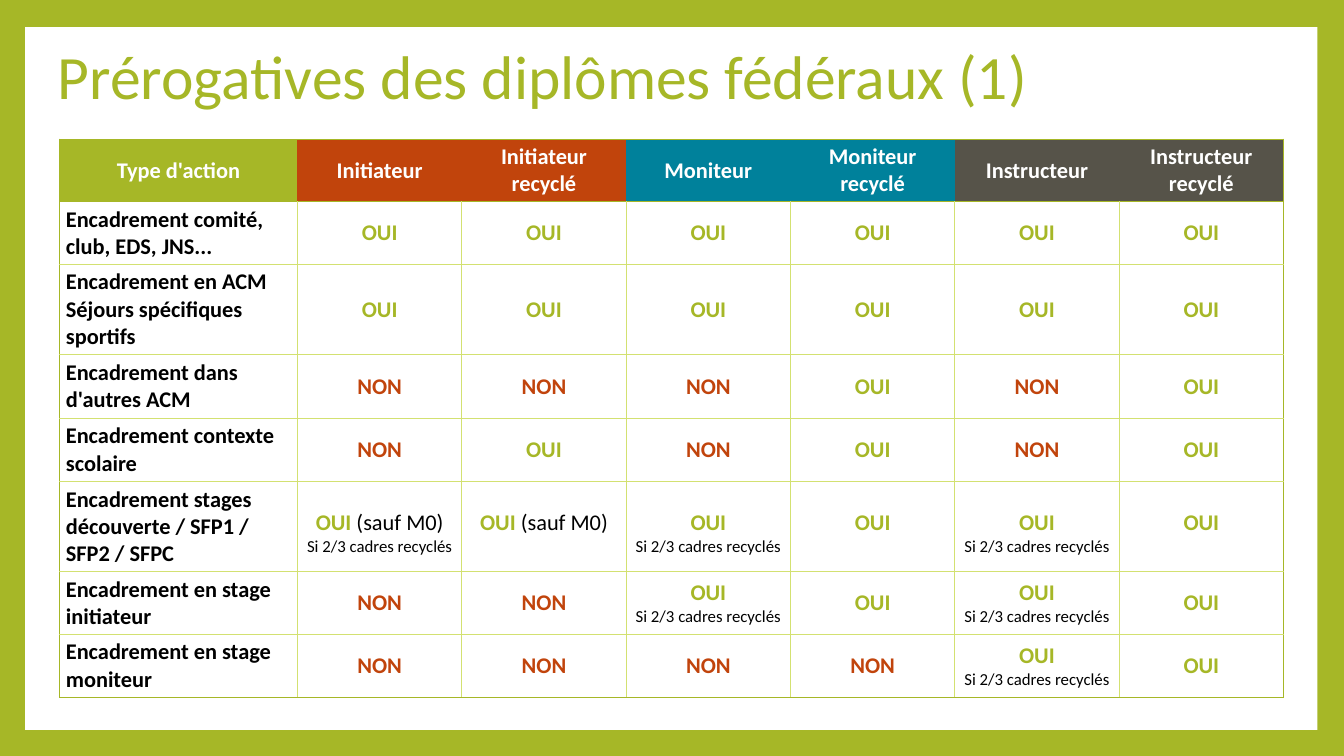
"""Build the slide listing what each federal diploma allows its holder to do."""
from lxml.etree import SubElement
from pptx import Presentation
from pptx.dml.color import RGBColor
from pptx.enum.shapes import MSO_SHAPE
from pptx.enum.text import MSO_ANCHOR, MSO_AUTO_SIZE, PP_ALIGN
from pptx.oxml.ns import qn
from pptx.util import Pt

COLORS = {
    "lime": "A6B727",
    "pale lime": "D3E171",
    "rust": "C1440C",
    "teal": "00819B",
    "brown": "565349",
    "white": "FFFFFF",
    "black": "000000",
}
VERDICT_COLORS = {"OUI": "lime", "NON": "rust"}
NO_TABLE_STYLE = "{2D5ABB26-0587-4C30-8999-92F81FD0307C}"

YES, NO = "OUI", "NON"
NOTE = "\nSi 2/3 cadres recyclés"
YES_NOTE = YES + NOTE
YES_EXCEPT = YES + " (sauf M0)"

HEADERS = [
    ("Type d'action", "lime"),
    ("Initiateur", "rust"),
    ("Initiateur recyclé", "rust"),
    ("Moniteur", "teal"),
    ("Moniteur recyclé", "teal"),
    ("Instructeur", "brown"),
    ("Instructeur recyclé", "brown"),
]
ACTIONS = [
    ("Encadrement comité, club, EDS, JNS...", [YES] * 6),
    ("Encadrement en ACM\nSéjours spécifiques sportifs", [YES] * 6),
    ("Encadrement dans d'autres ACM", [NO, NO, NO, YES, NO, YES]),
    ("Encadrement contexte scolaire", [NO, YES, NO, YES, NO, YES]),
    ("Encadrement stages découverte / SFP1 / SFP2 / SFPC",
     [YES_EXCEPT + NOTE, YES_EXCEPT, YES_NOTE, YES, YES_NOTE, YES]),
    ("Encadrement en stage initiateur", [NO, NO, YES_NOTE, YES, YES_NOTE, YES]),
    ("Encadrement en stage moniteur", [NO, NO, NO, NO, YES_NOTE, YES]),
]
COURSE_ROW = 5
ROW_HEIGHTS = [44.8, 44.8, 64.4, 45.4, 45.4, 64.4, 44.8, 44.8]
COLUMN_WIDTHS = [170] + [117.4] * 6


def write(paragraph, text, size=16, color="black", bold=True, align=PP_ALIGN.CENTER):
    paragraph.alignment = align
    run = paragraph.add_run()
    run.text = text
    run.font.name = "Calibri"
    run.font.size = Pt(size)
    run.font.bold = bold
    run.font.color.rgb = RGBColor.from_string(COLORS[color])


def draw_border(cell, side, on_frame):
    properties = cell._tc.get_or_add_tcPr()
    width = Pt(0.79 if on_frame else 1)
    line = SubElement(properties, qn(f"a:ln{side}"), w=str(width))
    fill = SubElement(line, qn("a:solidFill"))
    SubElement(fill, qn("a:srgbClr"), val=COLORS["lime" if on_frame else "pale lime"])


presentation = Presentation()
presentation.slide_width = Pt(960)
presentation.slide_height = Pt(540)
slide = presentation.slides.add_slide(presentation.slide_layouts[5])
slide.background.fill.solid()
slide.background.fill.fore_color.rgb = RGBColor.from_string(COLORS["lime"])

title = slide.shapes.title
title.left, title.top, title.width, title.height = Pt(34), Pt(28.8), Pt(895.7), Pt(56)
title.text_frame.auto_size = MSO_AUTO_SIZE.NONE
title.text_frame.vertical_anchor = MSO_ANCHOR.MIDDLE
title.text_frame.paragraphs[0].line_spacing = 0.9
write(title.text_frame.paragraphs[0], "Prérogatives des diplômes fédéraux (1)",
      size=44, color="lime", bold=False, align=PP_ALIGN.LEFT)

panel = slide.shapes.add_shape(MSO_SHAPE.RECTANGLE, Pt(18), Pt(19.4), Pt(923), Pt(502))
panel.shadow.inherit = False
panel.fill.solid()
panel.fill.fore_color.rgb = RGBColor.from_string(COLORS["white"])
panel.line.fill.background()
title.element.addprevious(panel.element)

table = slide.shapes.add_table(
    len(ROW_HEIGHTS), len(COLUMN_WIDTHS), Pt(42.5), Pt(99.4),
    Pt(sum(COLUMN_WIDTHS)), Pt(sum(ROW_HEIGHTS))).table
table.horz_banding = False
table._tbl.tblPr.find(qn("a:tableStyleId")).text = NO_TABLE_STYLE
for column, width in zip(table.columns, COLUMN_WIDTHS):
    column.width = Pt(width)
for row, height in zip(table.rows, ROW_HEIGHTS):
    row.height = Pt(height)

last_row, last_column = len(ROW_HEIGHTS) - 1, len(COLUMN_WIDTHS) - 1
for row_index in range(last_row + 1):
    for column_index in range(last_column + 1):
        cell = table.cell(row_index, column_index)
        cell.vertical_anchor = MSO_ANCHOR.MIDDLE
        cell.margin_left = cell.margin_right = Pt(4.6)
        cell.margin_top = cell.margin_bottom = Pt(2.8)
        frame_sides = {
            "L": column_index == 0,
            "R": column_index == last_column,
            "T": row_index <= 1,
            "B": row_index in (0, last_row),
        }
        for side, on_frame in frame_sides.items():
            if on_frame or row_index > 0:
                draw_border(cell, side, on_frame)
        cell.fill.background()

for column_index, (header, color) in enumerate(HEADERS):
    cell = table.cell(0, column_index)
    cell.fill.solid()
    cell.fill.fore_color.rgb = RGBColor.from_string(COLORS[color])
    write(cell.text_frame.paragraphs[0], header, color="white")

for row_index, (action, answers) in enumerate(ACTIONS, start=1):
    text_frame = table.cell(row_index, 0).text_frame
    for line_index, line in enumerate(action.split("\n")):
        paragraph = text_frame.add_paragraph() if line_index else text_frame.paragraphs[0]
        write(paragraph, line, align=PP_ALIGN.LEFT)

    for column_index, answer in enumerate(answers, start=1):
        cell = table.cell(row_index, column_index)
        if row_index == COURSE_ROW:
            cell.vertical_anchor = MSO_ANCHOR.TOP
            cell.margin_left = cell.margin_right = cell.margin_bottom = Pt(0)
            cell.margin_top = Pt(19.5)
        first_line, *notes = answer.split("\n")
        verdict, exception = first_line[:3], first_line[3:]
        paragraph = cell.text_frame.paragraphs[0]
        write(paragraph, verdict, color=VERDICT_COLORS[verdict])
        if exception:
            write(paragraph, exception, bold=False)
        for note in notes:
            write(cell.text_frame.add_paragraph(), note, size=12, bold=False)

presentation.save("out.pptx")
